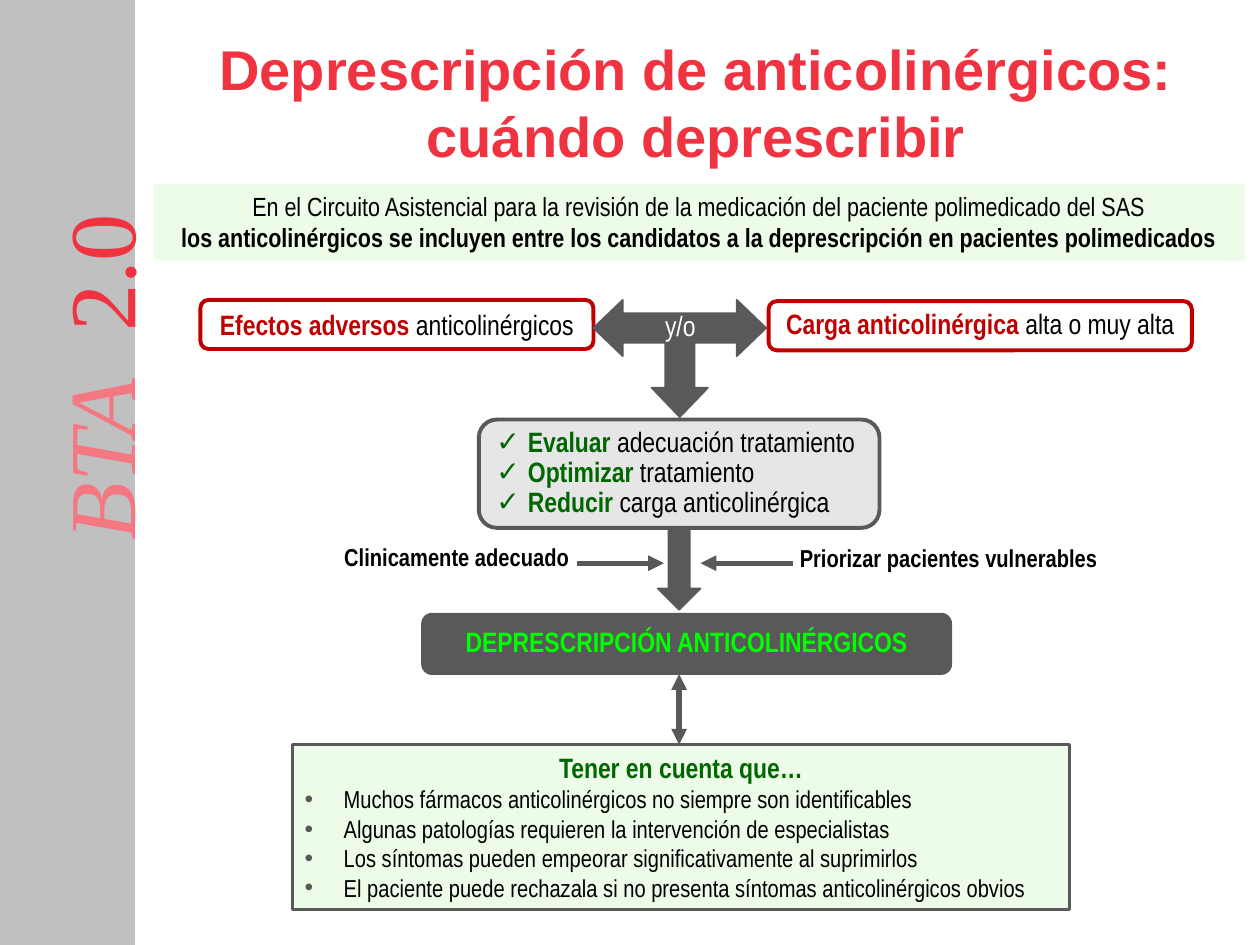
from dataclasses import dataclass
from typing import Optional

import pptx
import pptx.dml.color
import pptx.enum.shapes
import pptx.enum.text
import pptx.oxml.ns
import pptx.util
from lxml import etree

COLUMNS, ROWS = 100, 75
CELL = pptx.util.Inches(0.1)
COLORS = {
    "bar": "C0C0C0", "red": "EF3340", "pink": "F47881", "crimson": "C00000",
    "gray": "595959", "pale": "E6E6E6", "mint": "EDFBE9", "green": "006600",
    "lime": "00FF00", "black": "000000", "white": "FFFFFF",
}
SHAPE = pptx.enum.shapes.MSO_SHAPE
ALIGN = pptx.enum.text.PP_ALIGN
ANCHOR = pptx.enum.text.MSO_ANCHOR
ROUNDED = SHAPE.FLOWCHART_ALTERNATE_PROCESS


@dataclass
class Run:
    text: str
    color: str = "black"
    bold: bool = False
    italic: bool = False
    spacing: int = 0  # hundredths of a point


@dataclass
class Area:
    """A place on the grid, in columns and rows."""
    column: float
    row: float
    columns: float
    rows: float

    def lengths(self) -> list[int]:
        return [grid(n) for n in (self.column, self.row, self.columns, self.rows)]


@dataclass
class Box:
    area: Area
    lines: list[list[Run]]
    fill: Optional[str] = None
    line: Optional[str] = None
    weight: float = 2.25
    size: float = 16
    spacing: float = 0.9
    bullet: Optional[str] = None


@dataclass
class Arrow:
    start: tuple[float, float]
    end: tuple[float, float]
    double: bool = False


def grid(cells: float) -> int:
    return round(cells * CELL)


def rgb(name: str) -> pptx.dml.color.RGBColor:
    return pptx.dml.color.RGBColor.from_string(COLORS[name])


def add_element(parent, tag: str, **attributes: str):
    return etree.SubElement(parent, pptx.oxml.ns.qn(tag), attributes)


def add_bullet(paragraph, mark: str, color: str, indent: float) -> None:
    properties = paragraph._p.get_or_add_pPr()
    properties.set("marL", str(grid(indent)))
    properties.set("indent", str(-grid(indent)))
    add_element(add_element(properties, "a:buClr"), "a:srgbClr", val=COLORS[color])
    add_element(properties, "a:buFont", typeface="Arial")
    add_element(properties, "a:buChar", char=mark)


def write(shape, lines: list[list[Run]], *, size: float = 16, font: str = "Arial Narrow",
          align=ALIGN.CENTER, anchor=ANCHOR.MIDDLE, spacing: float = 1.0, wrap: bool = True,
          margin: float = 1, bullet: Optional[str] = None, bullet_color: str = "green",
          indent: float = 2.5, heading_size: Optional[float] = None) -> None:
    """Fill a shape with lines; a heading size keeps the first line free of bullets."""
    frame = shape.text_frame
    frame.word_wrap = wrap
    frame.auto_size = pptx.enum.text.MSO_AUTO_SIZE.NONE
    frame.vertical_anchor = anchor
    frame.margin_left = frame.margin_right = grid(margin)
    frame.margin_top = frame.margin_bottom = grid(0.5)
    for index, runs in enumerate(lines):
        paragraph = frame.paragraphs[0] if index == 0 else frame.add_paragraph()
        is_heading = heading_size is not None and index == 0
        paragraph.alignment = ALIGN.CENTER if is_heading else align
        paragraph.line_spacing = spacing
        if bullet and not is_heading:
            add_bullet(paragraph, bullet, bullet_color, indent)
        for part in runs:
            run = paragraph.add_run()
            run.text = part.text
            run.font.name = font
            run.font.size = pptx.util.Pt(heading_size if is_heading else size)
            run.font.bold, run.font.italic = part.bold, part.italic
            run.font.color.rgb = rgb(part.color)
            if part.spacing:
                run._r.get_or_add_rPr().set("spc", str(part.spacing))


def add_shape(slide, kind, area: Area, fill: Optional[str] = None,
              line: Optional[str] = None, weight: float = 1):
    shape = slide.shapes.add_shape(kind, *area.lengths())
    shape.shadow.inherit = False
    if fill:
        shape.fill.solid()
        shape.fill.fore_color.rgb = rgb(fill)
    else:
        shape.fill.background()
    if line:
        shape.line.color.rgb = rgb(line)
        shape.line.width = pptx.util.Pt(weight)
    else:
        shape.line.fill.background()
    return shape


def add_box(slide, box: Box) -> None:
    shape = add_shape(slide, ROUNDED, box.area, box.fill, box.line, box.weight)
    write(shape, box.lines, size=box.size, spacing=box.spacing, bullet=box.bullet,
          align=ALIGN.LEFT if box.bullet else ALIGN.CENTER, margin=1 if box.bullet else 0.4)


def add_arrow(slide, arrow: Arrow) -> None:
    connector = slide.shapes.add_connector(
        pptx.enum.shapes.MSO_CONNECTOR.STRAIGHT,
        *(grid(n) for n in arrow.start + arrow.end))
    connector.line.color.rgb = rgb("gray")
    connector.line.width = pptx.util.Pt(3)
    outline = connector.line._get_or_add_ln()
    for end in ("a:headEnd", "a:tailEnd") if arrow.double else ("a:tailEnd",):
        add_element(outline, end, type="triangle")
    add_element(connector._element.spPr, "a:effectLst")


BOXES = [
    Box(Area(15.9, 23.8, 31.2, 3.9), line="crimson", spacing=1, lines=[
        [Run("Efectos adversos ", "crimson", True), Run("anticolinérgicos")]]),
    Box(Area(61, 23.9, 33.6, 3.9), line="crimson", lines=[
        [Run("Carga anticolinérgica ", "crimson", True), Run("alta o muy alta")]]),
    Box(Area(38, 33.3, 31.8, 8.6), fill="pale", line="gray", bullet="✓", lines=[
        [Run("Evaluar", "green", True), Run(" adecuación tratamiento")],
        [Run("Optimizar", "green", True), Run(" tratamiento")],
        [Run("Reducir ", "green", True), Run("carga anticolinérgica")]]),
    Box(Area(33.5, 48.7, 42, 4.8), fill="gray", line="gray", weight=1, lines=[
        [Run("DEPRESCRIPCIÓN ANTICOLINÉRGICOS", "lime", True)]]),
    Box(Area(26, 42.1, 20.5, 4.5), size=14, lines=[[Run("Clinicamente adecuado", bold=True)]]),
    Box(Area(61.5, 42.9, 27.6, 3), size=14, lines=[
        [Run("Priorizar pacientes vulnerables", bold=True)]]),
]
ARROWS = [
    Arrow((62.9, 44.7), (55.6, 44.7)),
    Arrow((45.8, 44.7), (52.7, 44.7)),
    Arrow((53.9, 53.5), (53.9, 59.1), double=True),
]
CONTEXT = [
    [Run("En el Circuito Asistencial para la revisión de la medicación del paciente "
         "polimedicado del SAS")],
    [Run("los anticolinérgicos se incluyen entre los candidatos a la deprescripción "
         "en pacientes polimedicados", bold=True)],
]
CAUTIONS = [
    [Run("Tener en cuenta que…", "green", True)],
    [Run("Muchos fármacos anticolinérgicos no siempre son identificables")],
    [Run("Algunas patologías requieren la intervención de especialistas")],
    [Run("Los síntomas pueden empeorar significativamente al suprimirlos")],
    [Run("El paciente puede rechazala si no presenta síntomas anticolinérgicos obvios")],
]


def add_sidebar(slide) -> None:
    add_shape(slide, SHAPE.RECTANGLE, Area(0, 0, 10.7, ROWS), "bar", "bar", 0.75)
    bulletin = slide.shapes.add_textbox(*Area(-7.7, 21.2, 32.3, 13).lengths())
    bulletin.rotation = 270
    write(bulletin, [[Run("BTA", "pink", italic=True), Run(" ", "pink", spacing=1350),
                      Run("2.0", "red")]],
          size=54, font="Times New Roman", align=ALIGN.LEFT, anchor=ANCHOR.TOP)
    bulletin.text_frame.margin_top = grid(1.3)


def main() -> None:
    deck = pptx.Presentation()
    deck.slide_width, deck.slide_height = grid(COLUMNS), grid(ROWS)
    slide = deck.slides.add_slide(deck.slide_layouts.get_by_name("Title Only"))
    add_sidebar(slide)

    title = slide.shapes.title
    title.left, title.top, title.width, title.height = Area(15.8, 1.8, 78.9, 12.5).lengths()
    write(title, [[Run("Deprescripción de anticolinérgicos: cuándo deprescribir", "red", True)]],
          size=32, font="Arial")

    for box in BOXES:
        add_box(slide, box)

    fork = add_shape(slide, SHAPE.LEFT_RIGHT_UP_ARROW, Area(47.1, 23.8, 13.7, 9.3), "gray", "gray")
    fork.rotation = 180
    fork.adjustments[1] = 0.24
    either = slide.shapes.add_textbox(*Area(51.8, 24, 4.5, 3.7).lengths())
    write(either, [[Run("y/o", "white")]], align=ALIGN.LEFT, anchor=ANCHOR.TOP, wrap=False)
    add_shape(slide, SHAPE.DOWN_ARROW, Area(52.2, 41.9, 3.4, 6.5), "gray", "gray")

    context = add_shape(slide, SHAPE.RECTANGLE, Area(12.2, 14.6, 86.6, 6.1), "mint")
    write(context, CONTEXT, size=15, anchor=ANCHOR.TOP)
    cautions = add_shape(slide, SHAPE.RECTANGLE, Area(23.2, 59.1, 61.7, 13.1), "mint", "gray", 1.5)
    write(cautions, CAUTIONS, size=14, heading_size=16, align=ALIGN.LEFT, anchor=ANCHOR.TOP,
          bullet="•", bullet_color="gray", indent=3.1)

    for arrow in ARROWS:
        add_arrow(slide, arrow)
    deck.save("out.pptx")


if __name__ == "__main__":
    main()
